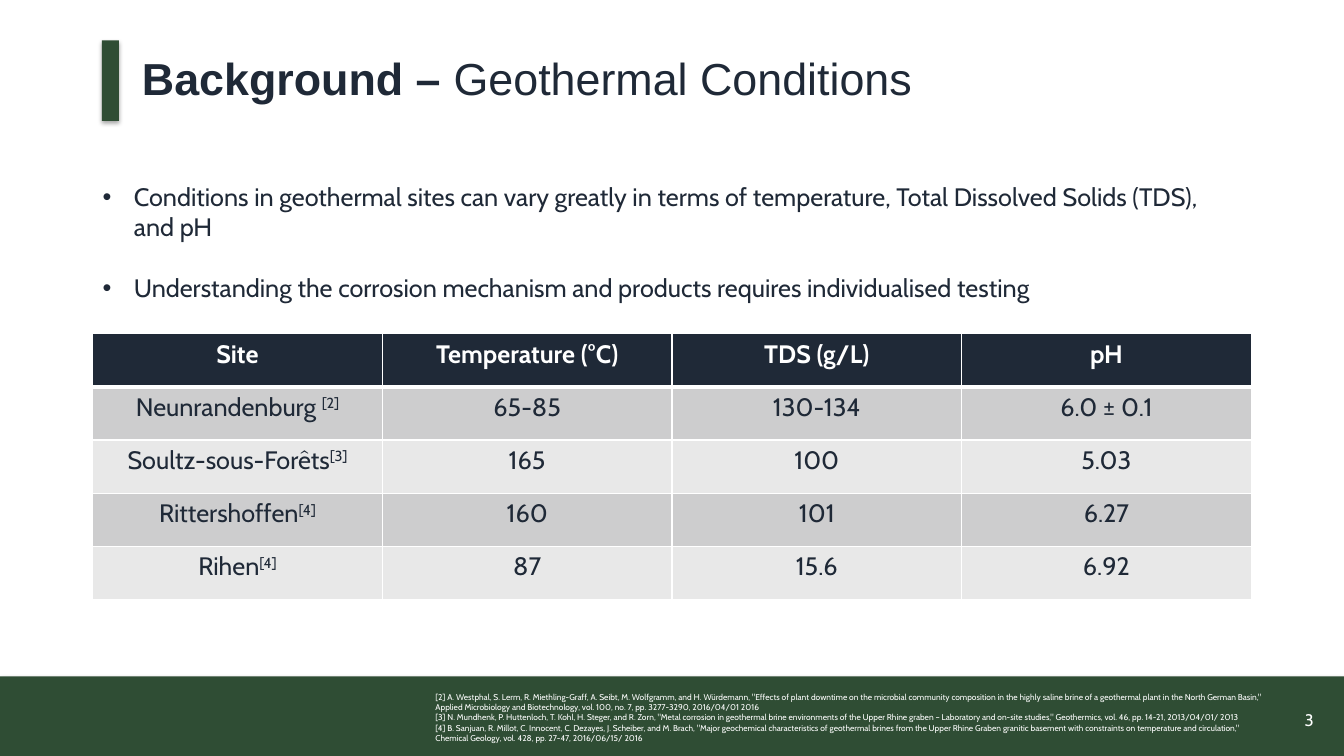
from dataclasses import dataclass

from lxml.etree import SubElement
from pptx import Presentation
from pptx.dml.color import RGBColor as RGB
from pptx.enum.shapes import MSO_SHAPE as SHAPE
from pptx.enum.text import MSO_ANCHOR as ANCHOR, PP_ALIGN as ALIGN
from pptx.oxml.ns import qn
from pptx.util import Inches, Pt


@dataclass(frozen=True)
class Theme:
    """Colours, fonts and type sizes of the deck."""
    green: str = "2F4D34"
    ink: str = "1F2937"
    white: str = "FFFFFF"
    bands: tuple = ("CDCDCE", "E8E8E8")
    heading: str = "Arial"
    body: str = "Cabin"
    title_size: int = 32
    body_size: int = 18
    number_size: int = 12
    note_size: int = 6


class Deck:
    """Holds the theme and the current slide and adds elements to it."""

    def __init__(self, theme):
        """Start a widescreen presentation with one blank slide."""
        self.theme = theme
        self.prs = Presentation()
        self.prs.slide_width, self.prs.slide_height = Inches(13.33), Inches(7.5)
        self.s = self.prs.slides.add_slide(self.prs.slide_layouts[6])

    def style(self, target, formats):
        """Set each named format value on an object."""
        for name, value in formats.items():
            setattr(target, name, value)

    def run(self, p, text, color, size, superscript=False, **formats):
        """Add a formatted run to a paragraph."""
        r = p.add_run()
        r.text = text
        self.style(r.font, {"name": self.theme.body, "size": Pt(size), **formats})
        r.font.color.rgb = RGB.from_string(color)
        if superscript:
            r._r.get_or_add_rPr().set("baseline", "30000")

    def bar(self, *box):
        """Add a green rectangle with a soft shadow below it."""
        sp = self.s.shapes.add_shape(SHAPE.RECTANGLE, *map(Inches, box))
        sp.fill.solid()
        sp.fill.fore_color.rgb = RGB.from_string(self.theme.green)
        sp.line.fill.background()
        sp.shadow.inherit = False
        effects = sp._element.spPr.find(qn("a:effectLst"))
        shadow = SubElement(effects, qn("a:outerShdw"), blurRad="40000", dist="23000",
                            dir="5400000", rotWithShape="0")
        black = SubElement(shadow, qn("a:srgbClr"), val="000000")
        SubElement(black, qn("a:alpha"), val="35000")

    def text(self, box, paragraphs, color, size, anchor=ANCHOR.TOP, bullet=None,
             gap=0, **formats):
        """Add a wrapped text box; each paragraph is a list of (text, formats)."""
        tf = self.s.shapes.add_textbox(*map(Inches, box)).text_frame
        self.style(tf, {"word_wrap": True, "vertical_anchor": anchor})
        for i, runs in enumerate(paragraphs):
            p = tf.add_paragraph() if i else tf.paragraphs[0]
            if bullet:
                self.bullet(p, bullet)
            if i and gap:
                p.space_before = Pt(gap)
            self.style(p, formats)
            for text, font in runs:
                self.run(p, text, color, size, **font)

    def bullet(self, p, char):
        """Give a paragraph a hanging bullet."""
        indent = Inches(0.31)
        pPr = p._p.get_or_add_pPr()
        pPr.set("marL", str(indent))
        pPr.set("indent", str(-indent))
        SubElement(pPr, qn("a:buFont"), typeface="Arial")
        SubElement(pPr, qn("a:buChar"), char=char)

    def borders(self, cell, widths):
        """Draw white cell borders from a dict of side and width in points."""
        tcPr = cell._tc.get_or_add_tcPr()
        for i, (side, width) in enumerate(widths.items()):
            ln = tcPr.makeelement(qn(f"a:ln{side}"), {"w": str(Pt(width))})
            fill = SubElement(ln, qn("a:solidFill"))
            SubElement(fill, qn("a:srgbClr"), val=self.theme.white)
            tcPr.insert(i, ln)

    def table(self, box, rows):
        """Add a banded table; a cell is a text or a (text, superscript) pair."""
        t = self.theme
        table = self.s.shapes.add_table(len(rows), len(rows[0]), *map(Inches, box)).table
        table.horz_banding = False
        for i, row in enumerate(rows):
            header = i == 0
            fill = t.ink if header else t.bands[(i - 1) % 2]
            color = t.white if header else t.ink
            for j, content in enumerate(row):
                cell = table.cell(i, j)
                cell.fill.solid()
                cell.fill.fore_color.rgb = RGB.from_string(fill)
                self.borders(cell, {"L": 1, "R": 1, "T": 3 if i == 1 else 1,
                                    "B": 3 if header else 1})
                p = cell.text_frame.paragraphs[0]
                p.alignment = ALIGN.CENTER
                parts = (content,) if isinstance(content, str) else content
                for k, text in enumerate(parts):
                    self.run(p, text, color, t.body_size, superscript=k > 0, bold=header)


POINTS = [
    "Conditions in geothermal sites can vary greatly in terms of temperature, "
    "Total Dissolved Solids (TDS), and pH",
    "Understanding the corrosion mechanism and products requires individualised testing",
]
SITES = [
    ("Site", "Temperature (°C)", "TDS (g/L)", "pH"),
    (("Neunrandenburg ", "[2]"), "65-85", "130-134", "6.0 ± 0.1"),
    (("Soultz-sous-Forêts", "[3]"), "165", "100", "5.03"),
    (("Rittershoffen", "[4]"), "160", "101", "6.27"),
    (("Rihen", "[4]"), "87", "15.6", "6.92"),
]
REFERENCES = [
    '[2] A. Westphal, S. Lerm, R. Miethling-Graff, A. Seibt, M. Wolfgramm, and H. Würdemann, '
    '"Effects of plant downtime on the microbial community composition in the highly saline '
    'brine of a geothermal plant in the North German Basin," Applied Microbiology and '
    'Biotechnology, vol. 100, no. 7, pp. 3277-3290, 2016/04/01 2016',
    '[3] N. Mundhenk, P. Huttenloch, T. Kohl, H. Steger, and R. Zorn, "Metal corrosion in '
    'geothermal brine environments of the Upper Rhine graben – Laboratory and on-site '
    'studies," Geothermics, vol. 46, pp. 14-21, 2013/04/01/ 2013',
    '[4] B. Sanjuan, R. Millot, C. Innocent, C. Dezayes, J. Scheiber, and M. Brach, "Major '
    'geochemical characteristics of geothermal brines from the Upper Rhine Graben granitic '
    'basement with constraints on temperature and circulation," Chemical Geology, vol. 428, '
    'pp. 27-47, 2016/06/15/ 2016',
]


def main():
    """Build and save the geothermal conditions slide."""
    t = Theme()
    deck = Deck(t)
    deck.bar(0, 6.71, 13.33, 0.8)
    deck.bar(1.01, 0.4, 0.17, 0.8)
    title = [("Background – ", {"name": t.heading, "bold": True}),
             ("Geothermal Conditions", {"name": t.heading})]
    deck.text((1.31, 0.4, 11.33, 0.8), [title], t.ink, t.title_size,
              ANCHOR.MIDDLE, line_spacing=0.9)
    deck.text((10.13, 6.94, 3, 0.4), [[("3", {})]], t.white, t.number_size,
              ANCHOR.MIDDLE, alignment=ALIGN.RIGHT)
    deck.table((0.92, 3.31, 11.49, 2.64), SITES)
    deck.text((0.92, 1.75, 11.49, 1.31), [[(point, {})] for point in POINTS],
              t.ink, t.body_size, bullet="•", gap=22)
    deck.text((4.22, 6.82, 8.42, 0.61), [[(ref, {})] for ref in REFERENCES],
              t.white, t.note_size)
    deck.prs.save("out.pptx")


if __name__ == "__main__":
    main()
